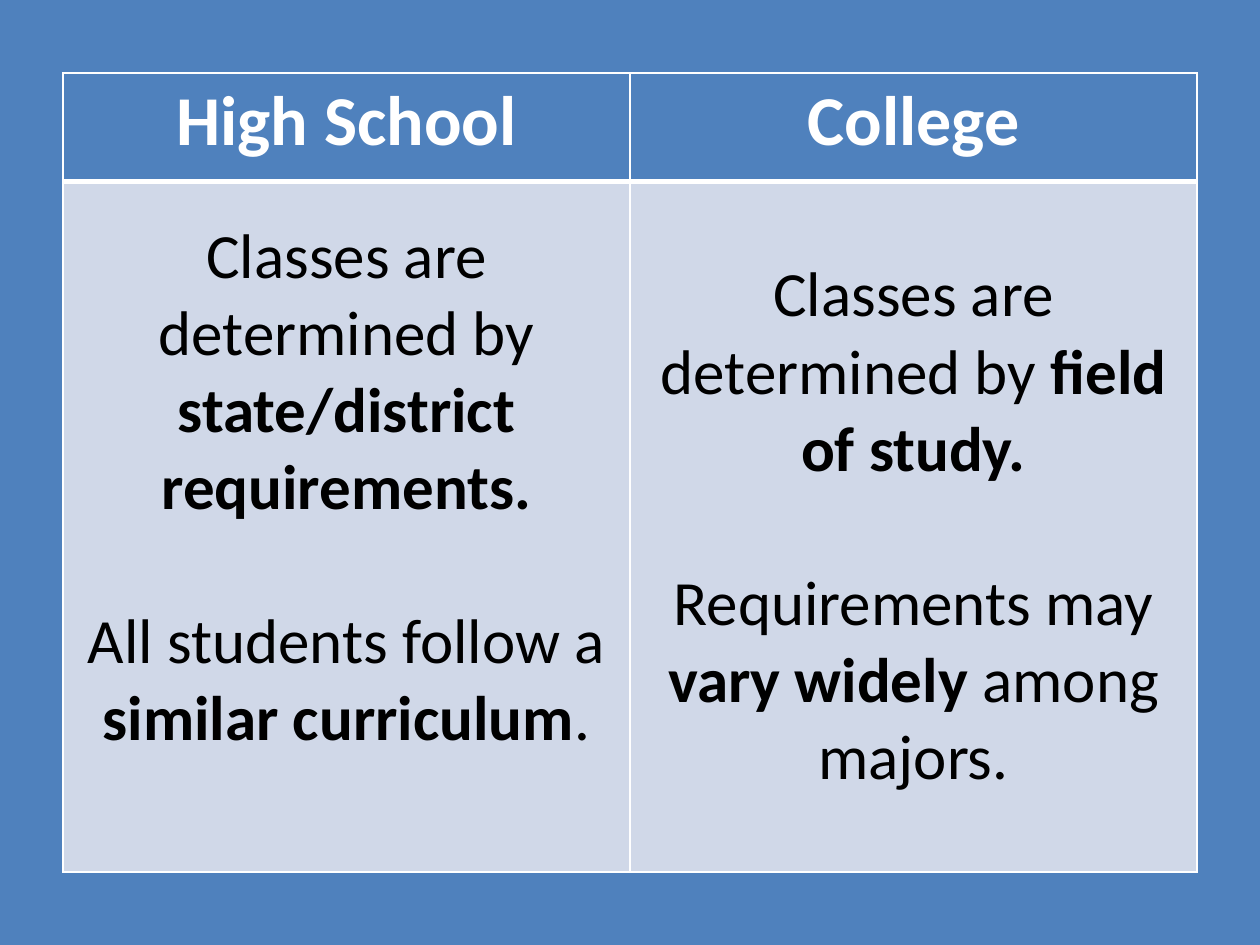
from lxml import etree
from pptx import Presentation
from pptx import util as u
from pptx.dml import color
from pptx.enum import text
from pptx.oxml import ns

COLORS = {"blue": "4F81BD", "pale": "D0D8E8", "white": "FFFFFF", "black": "000000"}
FONT = "Calibri"
HEADER_SIZE, BODY_SIZE = 40, 36
BLANK_LINE = u.Pt(44)
ROW_HEIGHTS = (0.86, 5.48)
HEADINGS = ("High School", "College")
COMPARISON = (
    (
        (("Classes are determined by ", False), ("state/district requirements.", True)),
        (("All students follow a ", False), ("similar curriculum", True), (".", False)),
    ),
    (
        (("Classes are determined by ", False), ("field of study.", True)),
        (("Requirements may ", False), ("vary widely ", True), ("among majors.", False)),
    ),
)


def rgb(name):
    return color.RGBColor.from_string(COLORS[name])


def paint(shape_fill, name):
    shape_fill.solid()
    shape_fill.fore_color.rgb = rgb(name)


def set_borders(cell, widths):
    properties = cell._tc.get_or_add_tcPr()
    for index, (side, width) in enumerate(widths.items()):
        line = etree.Element(ns.qn(f"a:ln{side}"), w=str(u.Pt(width)))
        fill = etree.SubElement(line, ns.qn("a:solidFill"))
        etree.SubElement(fill, ns.qn("a:srgbClr"), val=COLORS["white"])
        properties.insert(index, line)


def write_paragraphs(cell, paragraphs, size, ink):
    for index, spans in enumerate(paragraphs):
        frame = cell.text_frame
        para = frame.add_paragraph() if index else frame.paragraphs[0]
        para.alignment = text.PP_ALIGN.CENTER
        if index:
            para.space_before = BLANK_LINE
        for words, bold in spans:
            span = para.add_run()
            span.text = words
            span.font.name = FONT
            span.font.size = u.Pt(size)
            span.font.bold = bold
            span.font.color.rgb = rgb(ink)


def add_comparison(page, left, top, width):
    height = u.Inches(sum(ROW_HEIGHTS))
    table = page.shapes.add_table(2, len(HEADINGS), left, top, width, height).table
    for row, row_height in zip(table.rows, ROW_HEIGHTS):
        row.height = u.Inches(row_height)
    for column, (heading, paragraphs) in enumerate(zip(HEADINGS, COMPARISON)):
        header, body = table.cell(0, column), table.cell(1, column)
        write_paragraphs(header, [[(heading, True)]], HEADER_SIZE, "white")
        paint(header.fill, "blue")
        set_borders(header, {"L": 1, "R": 1, "T": 1, "B": 3})
        write_paragraphs(body, paragraphs, BODY_SIZE, "black")
        body.vertical_anchor = text.MSO_ANCHOR.MIDDLE
        paint(body.fill, "pale")
        set_borders(body, {"L": 1, "R": 1, "T": 3, "B": 1})
    table.cell(1, 0).margin_bottom = u.Inches(0.05) + BLANK_LINE


def main():
    deck = Presentation()
    deck.slide_width, deck.slide_height = u.Inches(10), u.Inches(7.5)
    page = deck.slides.add_slide(deck.slide_layouts[6])
    paint(page.background.fill, "blue")
    margin = u.Inches(0.5)
    add_comparison(page, margin, u.Inches(0.58), deck.slide_width - 2 * margin)
    deck.save("out.pptx")


if __name__ == "__main__":
    main()
